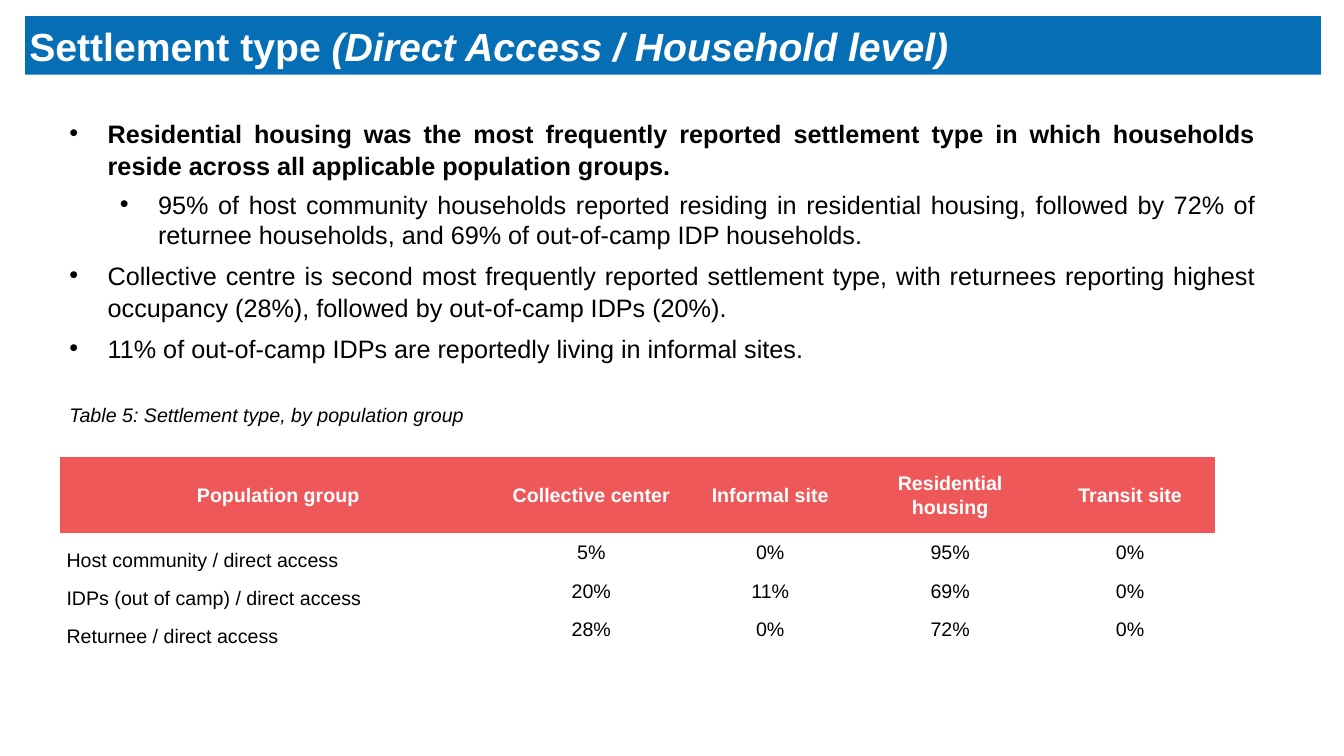
import pptx
import pptx.util
import pptx.dml.color
import pptx.enum.shapes
import pptx.enum.text
import pptx.oxml
import pptx.oxml.ns

Inches = pptx.util.Inches
ALIGN = pptx.enum.text.PP_ALIGN
ANCHOR = pptx.enum.text.MSO_ANCHOR

# Content
TITLE = [("Settlement type ", False), ("(Direct Access / Household level)", True)]
BULLETS = [  # level, bold, text
    (0, True, "Residential housing was the most frequently reported settlement type "
              "in which households reside across all applicable population groups."),
    (1, False, "95% of host community households reported residing in residential housing, "
               "followed by 72% of returnee households, and 69% of out-of-camp IDP households."),
    (0, False, "Collective centre is second most frequently reported settlement type, with "
               "returnees reporting highest occupancy (28%), followed by out-of-camp IDPs (20%)."),
    (0, False, "11% of out-of-camp IDPs are reportedly living in informal sites."),
]
CAPTION = "Table 5: Settlement type, by population group"
TABLE = [
    ("Population group", "Collective center", "Informal site", "Residential housing", "Transit site"),
    ("Host community / direct access", "5%", "0%", "95%", "0%"),
    ("IDPs (out of camp) / direct access", "20%", "11%", "69%", "0%"),
    ("Returnee / direct access", "28%", "0%", "72%", "0%"),
]
COLUMN_WIDTHS = [4.34, 1.87, 1.68, 1.89, 1.68]
HEADER_HEIGHT, ROW_HEIGHT = 0.76, 0.38
COLORS = {"bar": "056EB4", "header": "EE5859", "white": "FFFFFF", "black": "000000"}
FONT = "Arial"
LEFT = 0.59
LINE_SPACING = 1.07
NO_GRID_STYLE = "{2D5ABB26-0587-4C30-8999-92F81FD0307C}"


def rgb(name):
    return pptx.dml.color.RGBColor.from_string(COLORS[name])


def write(paragraph, text, size=14, color="black", bold=False, italic=False,
          align=ALIGN.LEFT, spacing=None, after=None):
    run = paragraph.add_run()
    run.text = text
    run.font.name = FONT
    run.font.size = pptx.util.Pt(size)
    run.font.bold = bold
    run.font.italic = italic
    run.font.color.rgb = rgb(color)
    paragraph.alignment = align
    if spacing is not None:
        paragraph.line_spacing = spacing
    if after is not None:
        paragraph.space_after = pptx.util.Pt(after)


def set_indent(paragraph, margin, hanging, bullet=None):
    properties = paragraph._p.get_or_add_pPr()
    properties.set("marL", str(Inches(margin)))
    properties.set("indent", str(-Inches(hanging)))
    if bullet:
        namespace = pptx.oxml.ns.nsdecls("a")
        for tag in (f'<a:buFont {namespace} typeface="{FONT}"/>',
                    f'<a:buChar {namespace} char="{bullet}"/>'):
            properties.append(pptx.oxml.parse_xml(tag))


def add_text_frame(left, top, width, height):
    box = slide.shapes.add_textbox(Inches(left), Inches(top), Inches(width), Inches(height))
    box.text_frame.word_wrap = True
    return box.text_frame


presentation = pptx.Presentation()
presentation.slide_width = Inches(13.33)
presentation.slide_height = Inches(7.5)
slide = presentation.slides.add_slide(presentation.slide_layouts[6])

# Title bar
bar = slide.shapes.add_shape(pptx.enum.shapes.MSO_SHAPE.RECTANGLE,
                             Inches(0.25), Inches(0.16), Inches(12.85), Inches(0.58))
bar.shadow.inherit = False
bar.fill.solid()
bar.fill.fore_color.rgb = rgb("bar")
bar.line.fill.background()
frame = bar.text_frame
frame.margin_left = frame.margin_right = frame.margin_top = frame.margin_bottom = 0
frame.vertical_anchor = ANCHOR.MIDDLE
frame.word_wrap = True
set_indent(frame.paragraphs[0], 0.42, 0.38)
for text, italic in TITLE:
    write(frame.paragraphs[0], text, size=28, color="white", bold=True, italic=italic)

# Findings
frame = add_text_frame(LEFT, 1.1, 11.96, 3.35)
for index, (level, bold, text) in enumerate(BULLETS):
    paragraph = frame.add_paragraph() if index else frame.paragraphs[0]
    paragraph.level = level
    set_indent(paragraph, 0.38 + 0.5 * level, 0.38, bullet="•")
    write(paragraph, text, size=18, bold=bold, align=ALIGN.JUSTIFY, after=6,
          spacing=1.0 if level else LINE_SPACING)

# Table caption
frame = add_text_frame(LEFT, 3.95, 12.26, 0.34)
write(frame.paragraphs[0], CAPTION, italic=True, align=ALIGN.JUSTIFY)

# Settlement table
row_heights = [HEADER_HEIGHT] + [ROW_HEIGHT] * (len(TABLE) - 1)
table = slide.shapes.add_table(len(TABLE), len(COLUMN_WIDTHS), Inches(LEFT), Inches(4.53),
                               Inches(sum(COLUMN_WIDTHS)), Inches(sum(row_heights))).table
table.horz_banding = False
table._tbl.tblPr.find(pptx.oxml.ns.qn("a:tableStyleId")).text = NO_GRID_STYLE
for column, width in zip(table.columns, COLUMN_WIDTHS):
    column.width = Inches(width)
for row_index, values in enumerate(TABLE):
    table.rows[row_index].height = Inches(row_heights[row_index])
    header = row_index == 0
    for column_index, text in enumerate(values):
        cell = table.cell(row_index, column_index)
        label = column_index == 0 and not header
        cell.margin_left = cell.margin_right = Inches(0.07)
        cell.margin_top = cell.margin_bottom = 0
        cell.vertical_anchor = ANCHOR.BOTTOM if label else ANCHOR.MIDDLE
        if header:
            cell.fill.solid()
            cell.fill.fore_color.rgb = rgb("header")
        else:
            cell.fill.background()
        write(cell.text_frame.paragraphs[0], text, color="white" if header else "black",
              bold=header, align=ALIGN.LEFT if label else ALIGN.CENTER, spacing=LINE_SPACING)

presentation.save("out.pptx")
